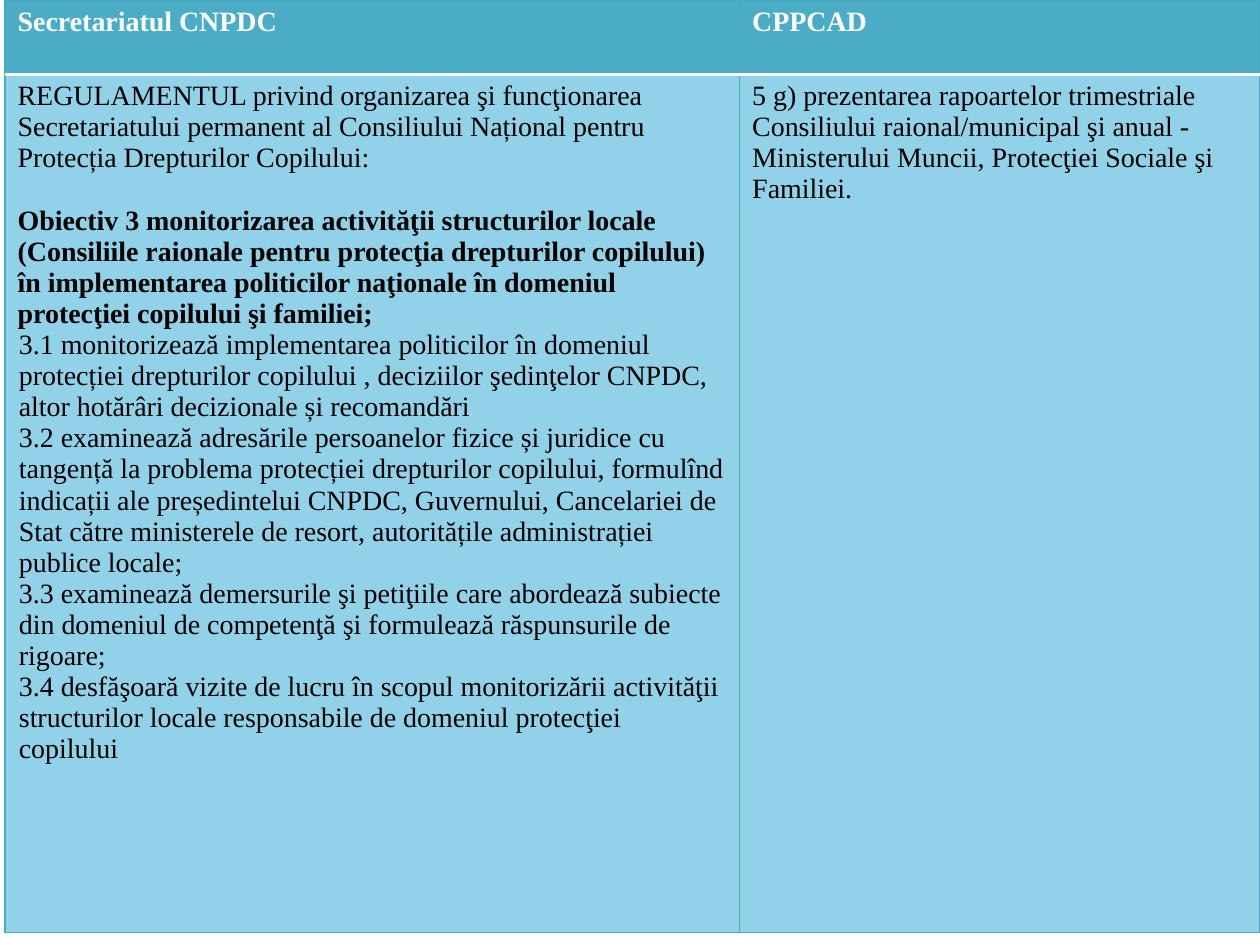
from dataclasses import dataclass

from lxml.etree import SubElement
from pptx import Presentation
from pptx.dml.color import RGBColor
from pptx.oxml.ns import qn
from pptx.util import Inches, Pt

TEAL = RGBColor(0x4B, 0xAC, 0xC6)
PALE_BLUE = RGBColor(0x92, 0xD2, 0xE8)
EDGE = RGBColor(0x46, 0xAA, 0xC5)
WHITE = RGBColor(0xFF, 0xFF, 0xFF)
BLACK = RGBColor(0x00, 0x00, 0x00)

FONT = "Times New Roman"
TEXT_SIZE = Pt(16)
LINE_GAP = Pt(17.8)
COLUMNS = (5.83, 4.13)
ROWS = (0.59, 6.81)


@dataclass(frozen=True)
class Passage:
    """A paragraph of a table cell."""
    text: str
    bold: bool = False
    gap: int = 0
    indent: float = 0


@dataclass(frozen=True)
class RowStyle:
    """The look shared by the cells of a row."""
    fill: RGBColor
    ink: RGBColor
    edges: dict[str, tuple[RGBColor, float]]


THIN = (EDGE, 0.75)
RULE = (WHITE, 2)
STYLES = (
    RowStyle(TEAL, WHITE, {"L": THIN, "R": THIN, "T": THIN, "B": RULE}),
    RowStyle(PALE_BLUE, BLACK, {"L": THIN, "R": THIN, "T": RULE, "B": THIN}),
)

TASKS = (
    "3.1 monitorizează implementarea politicilor în domeniul protecției drepturilor copilului , "
    "deciziilor şedinţelor CNPDC, altor hotărâri decizionale și recomandări",
    "3.2 examinează adresările persoanelor fizice și juridice cu tangență la problema protecției "
    "drepturilor copilului, formulînd indicații ale președintelui CNPDC, Guvernului, Cancelariei "
    "de Stat către ministerele de resort, autoritățile administrației publice locale;",
    "3.3 examinează demersurile şi petiţiile care abordează subiecte din domeniul de competenţă "
    "şi formulează răspunsurile de rigoare;",
    "3.4 desfăşoară vizite de lucru în scopul monitorizării activităţii structurilor locale "
    "responsabile de domeniul protecţiei copilului",
)
CONTENT = (
    ((Passage("Secretariatul CNPDC", bold=True),), (Passage("CPPCAD", bold=True),)),
    (
        (
            Passage("REGULAMENTUL privind organizarea şi funcţionarea Secretariatului permanent "
                    "al Consiliului Național pentru Protecția Drepturilor Copilului:"),
            Passage("Obiectiv 3 monitorizarea activităţii structurilor locale (Consiliile "
                    "raionale pentru protecţia drepturilor copilului) în implementarea "
                    "politicilor naţionale în domeniul protecţiei copilului şi familiei;",
                    bold=True, gap=LINE_GAP),
            *(Passage(task, indent=0.01) for task in TASKS),
        ),
        (
            Passage("5 g) prezentarea rapoartelor trimestriale Consiliului raional/municipal şi "
                    "anual - Ministerului Muncii, Protecţiei Sociale şi Familiei."),
        ),
    ),
)


def draw_edges(cell, edges: dict[str, tuple[RGBColor, float]]) -> None:
    """Give each side of the cell its line."""
    properties = cell._tc.get_or_add_tcPr()
    for side, (color, width) in edges.items():
        line = SubElement(properties, qn(f"a:ln{side}"), w=str(Pt(width)))
        SubElement(SubElement(line, qn("a:solidFill")), qn("a:srgbClr"), val=str(color))


def write_cell(cell, passages: tuple[Passage, ...], style: RowStyle) -> None:
    """Fill the cell and set its paragraphs."""
    draw_edges(cell, style.edges)
    cell.fill.solid()
    cell.fill.fore_color.rgb = style.fill
    cell.text_frame.text = "\n".join(passage.text for passage in passages)
    for para, passage in zip(cell.text_frame.paragraphs, passages):
        para.space_before = passage.gap
        if passage.indent:
            para._p.get_or_add_pPr().set("marL", str(Inches(passage.indent)))
        font = para.runs[0].font
        font.name, font.size = FONT, TEXT_SIZE
        font.bold, font.color.rgb = passage.bold, style.ink


def main() -> None:
    """Build the comparison table and save the deck."""
    deck = Presentation()
    deck.slide_width, deck.slide_height = Inches(10), Inches(7.5)
    page = deck.slides.add_slide(deck.slide_layouts[6])
    table = page.shapes.add_table(
        len(ROWS), len(COLUMNS), Inches(0.04), 0, Inches(sum(COLUMNS)), Inches(sum(ROWS))
    ).table
    for column, width in zip(table.columns, COLUMNS):
        column.width = Inches(width)
    for row, height, contents, style in zip(table.rows, ROWS, CONTENT, STYLES):
        row.height = Inches(height)
        for cell, passages in zip(row.cells, contents):
            write_cell(cell, passages, style)
    deck.save("out.pptx")


if __name__ == "__main__":
    main()
